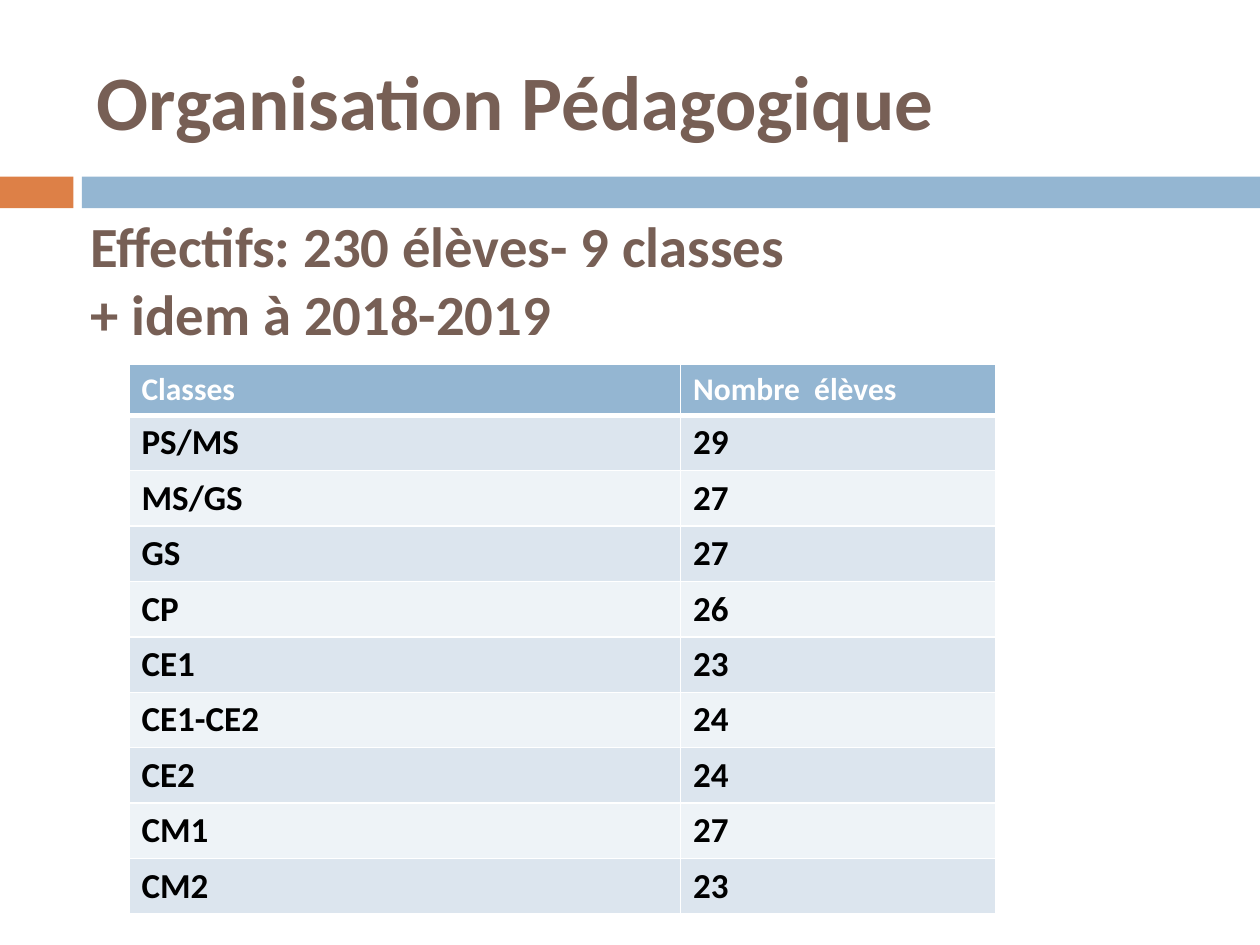
from pptx import Presentation
from pptx.dml.color import RGBColor
from pptx.enum.shapes import MSO_SHAPE
from pptx.enum.text import MSO_ANCHOR, MSO_AUTO_SIZE, PP_ALIGN
from pptx.oxml import parse_xml
from pptx.oxml.ns import nsdecls
from pptx.util import Cm, Pt

FONT = "Calibri"
BROWN, ORANGE, BLUE = "775F55", "DD8047", "94B6D2"
WHITE, BLACK = "FFFFFF", "000000"
BANDS = ("DCE5EE", "EEF3F7")

HEADER = ("Classes", "Nombre  élèves")
CLASSES = [
    ("PS/MS", 29), ("MS/GS", 27), ("GS", 27), ("CP", 26), ("CE1", 23),
    ("CE1-CE2", 24), ("CE2", 24), ("CM1", 27), ("CM2", 23),
]


def rgb(value):
    return RGBColor.from_string(value)


def add_run(p, text, size, color):
    r = p.add_run()
    r.text = text
    r.font.name, r.font.size, r.font.bold = FONT, Pt(size), True
    r.font.color.rgb = rgb(color)


def place(sp, x, y, w, h):
    sp.left, sp.top, sp.width, sp.height = Cm(x), Cm(y), Cm(w), Cm(h)


def set_borders(cell, top, bottom):
    """Draw white borders; top and bottom are widths in points."""
    tcPr = cell._tc.get_or_add_tcPr()
    for side, width in (("L", 1), ("R", 1), ("T", top), ("B", bottom)):
        tcPr.append(parse_xml(
            f'<a:ln{side} {nsdecls("a")} w="{Pt(width)}"><a:solidFill>'
            f'<a:srgbClr val="{WHITE}"/></a:solidFill></a:ln{side}>'))


def add_band(slide, x, y, w, h):
    """Orange block and blue bar, separated by a narrow gap."""
    block, gap = 1.48, 0.17
    bar_x = block + gap
    for left, width, color in ((x, block, ORANGE), (x + bar_x, w - bar_x, BLUE)):
        sp = slide.shapes.add_shape(MSO_SHAPE.RECTANGLE, Cm(left), Cm(y), Cm(width), Cm(h))
        sp.shadow.inherit = False
        sp.fill.solid()
        sp.fill.fore_color.rgb = rgb(color)
        sp.line.fill.background()


def add_heading(slide, x, y, w, h):
    tf = slide.shapes.add_textbox(Cm(x), Cm(y), Cm(w), Cm(h)).text_frame
    tf.word_wrap = True
    tf.vertical_anchor = MSO_ANCHOR.MIDDLE
    add_run(tf.paragraphs[0], "Organisation Pédagogique", 44, BROWN)


def fill_title(slide, x, y, w, h):
    sp = slide.shapes.title
    place(sp, x, y, w, h)
    tf = sp.text_frame
    tf.word_wrap = True
    tf.auto_size = MSO_AUTO_SIZE.NONE
    tf.vertical_anchor = MSO_ANCHOR.TOP
    tf.margin_top = Cm(0.07)
    p = tf.paragraphs[0]
    p.alignment = PP_ALIGN.LEFT
    add_run(p, "Effectifs: 230 élèves- 9 classes", 32.4, BROWN)
    p.add_line_break()
    add_run(p, "+ idem à 2018-2019", 32.4, BROWN)


def add_class_table(slide, x, y, w, h):
    rows = [HEADER, *CLASSES]
    header_h, name_w = 1.02, 11.12
    row_h = (h - header_h) / len(CLASSES)
    table = slide.shapes.add_table(len(rows), 2, Cm(x), Cm(y), Cm(w), Cm(h)).table
    table.columns[0].width, table.columns[1].width = Cm(name_w), Cm(w - name_w)
    for i, values in enumerate(rows):
        table.rows[i].height = Cm(row_h if i else header_h)
        fill = BANDS[(i - 1) % 2] if i else BLUE
        size, color = (20, BLACK) if i else (18, WHITE)
        for j, value in enumerate(values):
            cell = table.cell(i, j)
            set_borders(cell, top=3 if i == 1 else 1, bottom=1 if i else 3)
            cell.fill.solid()
            cell.fill.fore_color.rgb = rgb(fill)
            add_run(cell.text_frame.paragraphs[0], str(value), size, color)


def main():
    prs = Presentation()
    prs.slide_width, prs.slide_height = Cm(25.4), Cm(19.05)
    slide = prs.slides.add_slide(prs.slide_layouts[5])
    add_band(slide, 0, 3.56, 25.4, 0.64)
    fill_title(slide, 1.57, 4.17, 23.8, 6.15)
    add_heading(slide, 1.7, 0.64, 22.66, 2.74)
    add_class_table(slide, 2.6, 7.35, 17.47, 11.08)
    prs.save("out.pptx")


if __name__ == "__main__":
    main()
